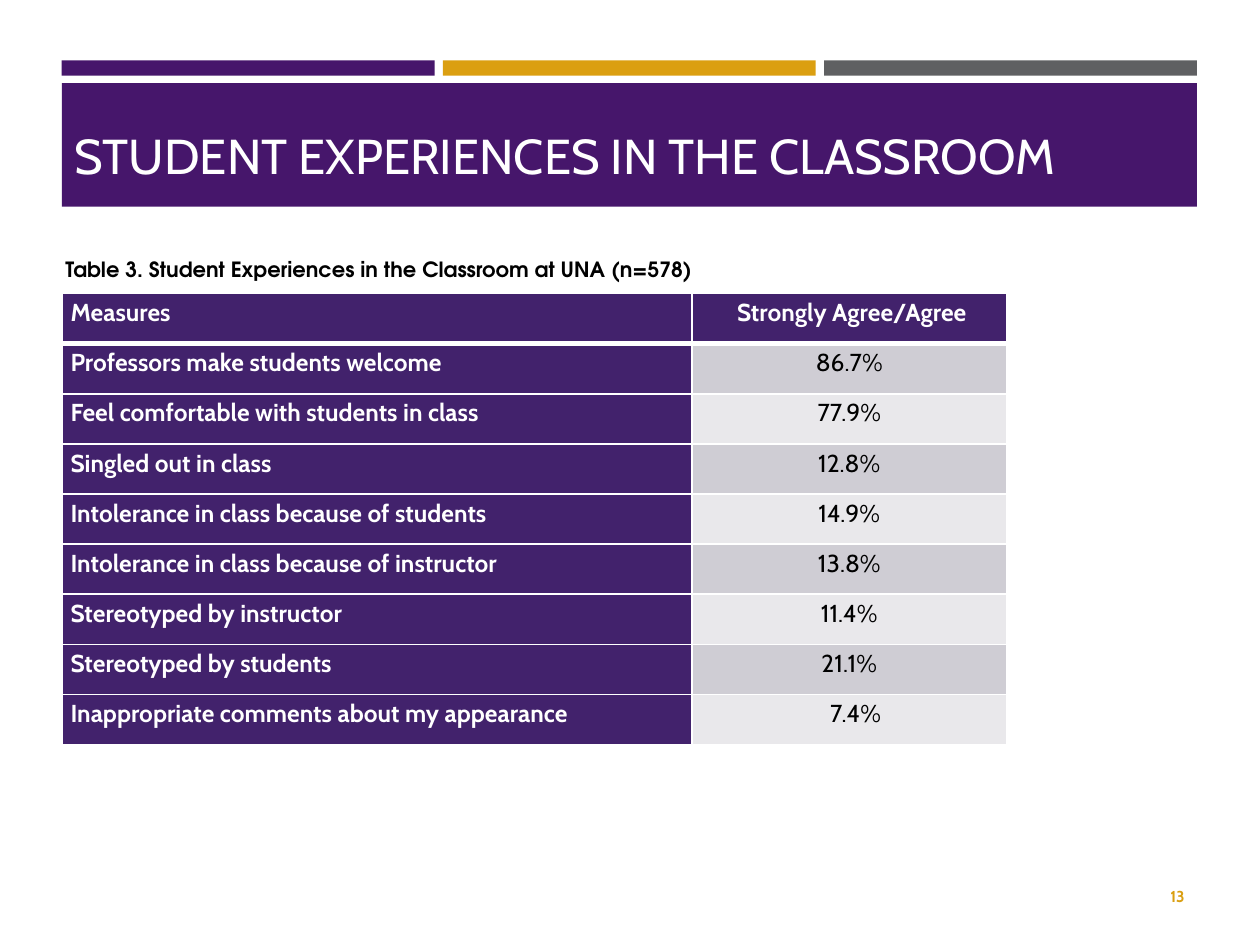
from pptx import Presentation
from pptx import util as u
from pptx.dml.color import RGBColor
from pptx.enum import shapes, text
from pptx.oxml import parse_xml
from pptx.oxml.ns import nsdecls

PURPLE, GOLD, GRAY, WHITE, BLACK = "46166B", "DB9F11", "5F6062", "FFFFFF", "000000"
HEADER, BANDS = "42226C", ("CFCDD4", "E9E8EB")
LEFT, WIDTH = 0.49, 9.01
ROWS = [
    ("Measures", "Strongly Agree/Agree"),
    ("Professors make students welcome", "86.7%"),
    ("Feel comfortable with students in class", "77.9%"),
    ("Singled out in class", "12.8%"),
    ("Intolerance in class because of students", "14.9%"),
    ("Intolerance in class because of instructor", "13.8%"),
    ("Stereotyped by instructor", "11.4%"),
    ("Stereotyped by students", "21.1%"),
    ("Inappropriate comments about my appearance", "7.4%"),
]


def color(value):
    return RGBColor.from_string(value)


def apply(obj, values):
    for name, value in values.items():
        setattr(obj, name, value)


def place(sp, box):
    apply(sp, dict(zip(("left", "top", "width", "height"), map(u.Inches, box))))


class Deck:
    font = "Cabin"

    def __init__(self):
        self.prs = Presentation()
        apply(self.prs, {"slide_width": u.Inches(10), "slide_height": u.Inches(7.5)})
        self.s = self.prs.slides.add_slide(self.prs.slide_layouts[5])

    def add_text(self, tf, words, size, fill, bold=False, font=None, **para):
        p = tf.paragraphs[0]
        apply(p, para)
        r = p.add_run()
        r.text = words
        apply(r.font, {"name": font or self.font, "size": u.Pt(size), "bold": bold})
        r.font.color.rgb = color(fill)

    def bar(self, box, fill):
        sp = self.s.shapes.add_shape(shapes.MSO_SHAPE.RECTANGLE, *map(u.Inches, box))
        sp.shadow.inherit = False
        sp.fill.solid()
        sp.fill.fore_color.rgb = color(fill)
        sp.line.fill.background()

    def title(self, box, words):
        sp = self.s.shapes.title
        place(sp, box)
        sp.element.getparent().append(sp.element)
        apply(sp.text_frame, {"word_wrap": True, "auto_size": text.MSO_AUTO_SIZE.NONE,
                              "vertical_anchor": text.MSO_ANCHOR.BOTTOM})
        self.add_text(sp.text_frame, words, 28, WHITE, alignment=text.PP_ALIGN.LEFT)

    def label(self, box, words, size, fill, anchor, wrap=True, **style):
        tf = self.s.shapes.add_textbox(*map(u.Inches, box)).text_frame
        apply(tf, {"word_wrap": wrap, "vertical_anchor": anchor})
        self.add_text(tf, words, size, fill, bold=True, **style)

    def borders(self, cell, top, bottom):
        tc_pr = cell._tc.get_or_add_tcPr()
        for side, points in (("L", 1), ("R", 1), ("T", top), ("B", bottom)):
            tc_pr.append(parse_xml(
                f'<a:ln{side} {nsdecls("a")} w="{u.Pt(points)}"><a:solidFill>'
                f'<a:srgbClr val="{WHITE}"/></a:solidFill></a:ln{side}>'))

    def cell(self, cell, words, fill, ink, bold, align, shift=0):
        apply(cell, {"margin_left": u.Inches(0.07 + shift), "margin_right": u.Inches(0.07),
                     "margin_top": 0, "margin_bottom": 0})
        cell.fill.solid()
        cell.fill.fore_color.rgb = color(fill)
        self.add_text(cell.text_frame, words, 14, ink, bold, alignment=align, line_spacing=1.15)

    def table(self, box, widths, rows):
        table = self.s.shapes.add_table(len(rows), len(widths), *map(u.Inches, box)).table
        for column, width in zip(table.columns, widths):
            column.width = u.Inches(width)
        shifts = {(0, 1): 0.04, (len(rows) - 1, 1): 0.1}
        for i, row in enumerate(rows):
            table.rows[i].height = u.Inches(box[3] / len(rows))
            for j, words in enumerate(row):
                cell = table.cell(i, j)
                dark = i == 0 or j == 0
                self.borders(cell, 3 if i == 1 else 1, 3 if i == 0 else 1)
                self.cell(cell, words, HEADER if dark else BANDS[(i - 1) % 2],
                          WHITE if dark else BLACK, dark,
                          text.PP_ALIGN.CENTER if j else text.PP_ALIGN.LEFT,
                          shifts.get((i, j), 0))


def main():
    deck = Deck()
    bar_width = 2.96
    step = (WIDTH - bar_width) / 2
    for i, fill in enumerate((PURPLE, GOLD, GRAY)):
        deck.bar((LEFT + i * step, 0.48, bar_width, 0.12), fill)
    deck.bar((LEFT, 0.66, WIDTH, 0.98), PURPLE)
    deck.title((LEFT, 0.75, WIDTH, 0.76), "STUDENT EXPERIENCES IN THE CLASSROOM")
    deck.label((8.53, 6.91, 0.97, 0.4), "13", 9, "DA9F11", text.MSO_ANCHOR.MIDDLE,
               alignment=text.PP_ALIGN.RIGHT)
    deck.table((LEFT, 2.33, 7.5, 3.58), (5, 2.5), ROWS)
    deck.label((0.42, 1.99, 5.2, 0.5),
               "Table 3. Student Experiences in the Classroom at UNA (n=578)",
               12, BLACK, text.MSO_ANCHOR.TOP, wrap=False, font="TeX Gyre Adventor")
    deck.prs.save("out.pptx")


if __name__ == "__main__":
    main()
